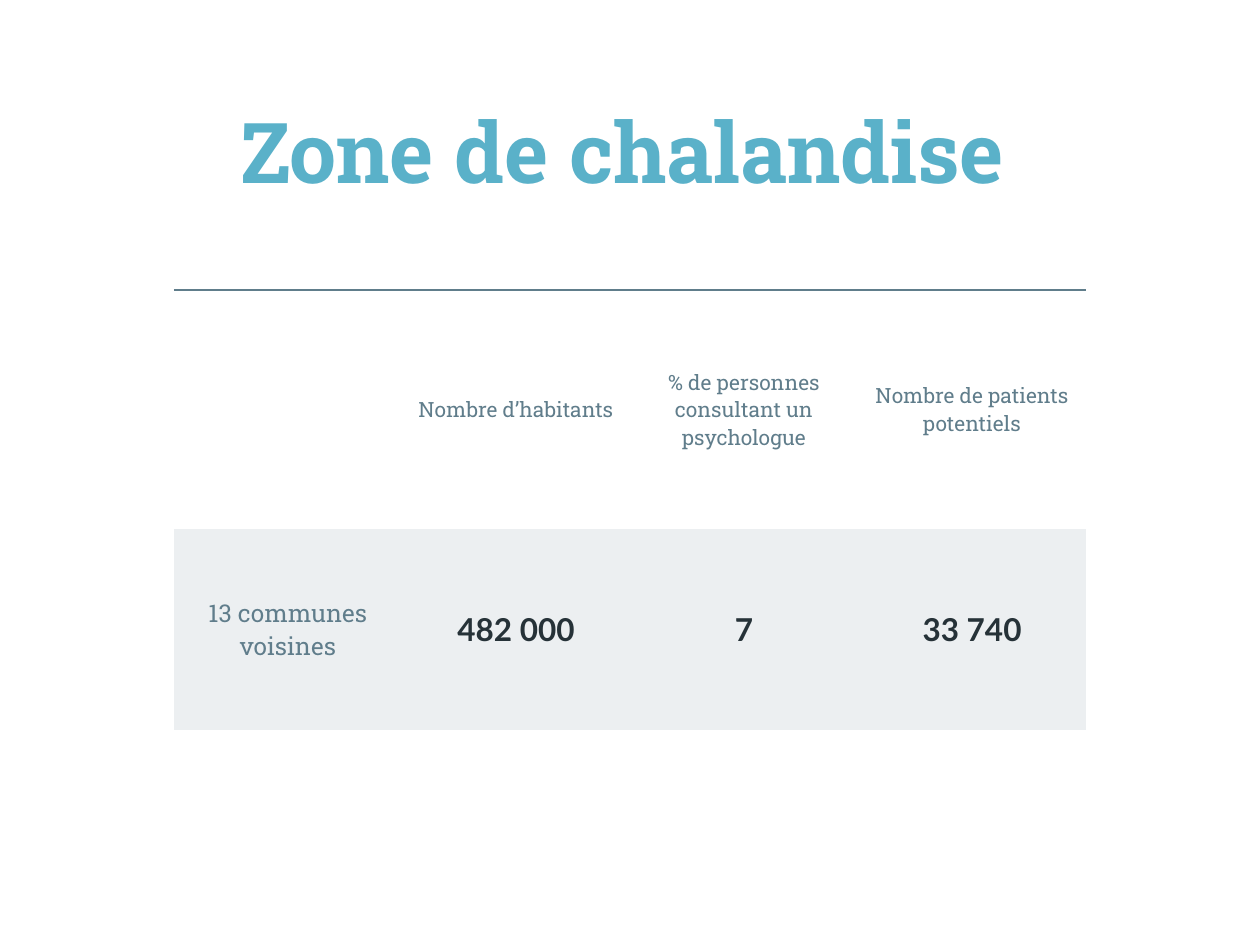
from lxml.etree import SubElement
from pptx import Presentation
from pptx.dml.color import RGBColor
from pptx.enum.text import MSO_ANCHOR, PP_ALIGN
from pptx.oxml.ns import qn
from pptx.util import Inches, Pt

TITLE = "Zone de chalandise"
# Each cell is a list of paragraphs
ROWS = [
    [[], ["Nombre d’habitants"], ["% de personnes consultant un psychologue"],
     ["Nombre de patients potentiels"]],
    [["13 communes", "voisines"], ["482 000"], ["7"], ["33 740"]],
]
ROW_HEIGHTS = [1.9, 1.59]
COL_WIDTH = 1.81

TEAL = RGBColor(0x5A, 0xB1, 0xC9)
SLATE = RGBColor(0x60, 0x7D, 0x8B)
DARK = RGBColor(0x26, 0x32, 0x38)
PALE = RGBColor(0xEC, 0xEF, 0xF1)

# Font name, size, colour, bold
TITLE_FONT = ("Roboto Slab", 48, TEAL, True)
HEADER_FONT = ("Roboto Slab", 12, SLATE, False)
LABEL_FONT = ("Roboto Slab", 14, SLATE, False)
VALUE_FONT = ("Lato", 18, DARK, True)


def write(tf, lines, style, align):
    for i, line in enumerate(lines):
        p = tf.paragraphs[0] if i == 0 else tf.add_paragraph()
        p.alignment = align
        r = p.add_run()
        r.text = line
        r.font.name, size, r.font.color.rgb, r.font.bold = style
        r.font.size = Pt(size)


def set_borders(cell, top_rule):
    """Clear all four borders, except for a slate rule on top if asked."""
    tcPr = cell._tc.get_or_add_tcPr()
    for side in ("lnL", "lnR", "lnT", "lnB"):
        ln = SubElement(tcPr, qn(f"a:{side}"))
        if side == "lnT" and top_rule:
            ln.set("w", str(Pt(1.5)))
            fill = SubElement(ln, qn("a:solidFill"))
            SubElement(fill, qn("a:srgbClr")).set("val", str(SLATE))
        else:
            SubElement(ln, qn("a:noFill"))


def set_margins(box):
    box.margin_left = box.margin_right = Inches(0.1)
    box.margin_top = box.margin_bottom = Inches(0.1)


prs = Presentation()
prs.slide_width, prs.slide_height = Inches(10), Inches(7.5)
slide = prs.slides.add_slide(prs.slide_layouts[6])

table = slide.shapes.add_table(
    len(ROWS), len(ROWS[0]), Inches(1.38), Inches(2.3),
    Inches(COL_WIDTH * len(ROWS[0])), Inches(sum(ROW_HEIGHTS))).table
table.first_row = table.horz_banding = False
for column in table.columns:
    column.width = Inches(COL_WIDTH)
for row, height in zip(table.rows, ROW_HEIGHTS):
    row.height = Inches(height)

for i, row in enumerate(ROWS):
    for j, lines in enumerate(row):
        cell = table.cell(i, j)
        set_margins(cell)
        cell.vertical_anchor = MSO_ANCHOR.MIDDLE
        set_borders(cell, top_rule=i == 0)
        if i == 0:
            cell.fill.background()
            style = HEADER_FONT
        else:
            cell.fill.solid()
            cell.fill.fore_color.rgb = PALE
            style = LABEL_FONT if j == 0 else VALUE_FONT
        write(cell.text_frame, lines, style, PP_ALIGN.CENTER)

title = slide.shapes.add_textbox(Inches(1.81), 0, Inches(6.38), Inches(1.69))
tf = title.text_frame
tf.word_wrap = True
tf.vertical_anchor = MSO_ANCHOR.BOTTOM
set_margins(tf)
write(tf, [TITLE], TITLE_FONT, PP_ALIGN.LEFT)

prs.save("out.pptx")
